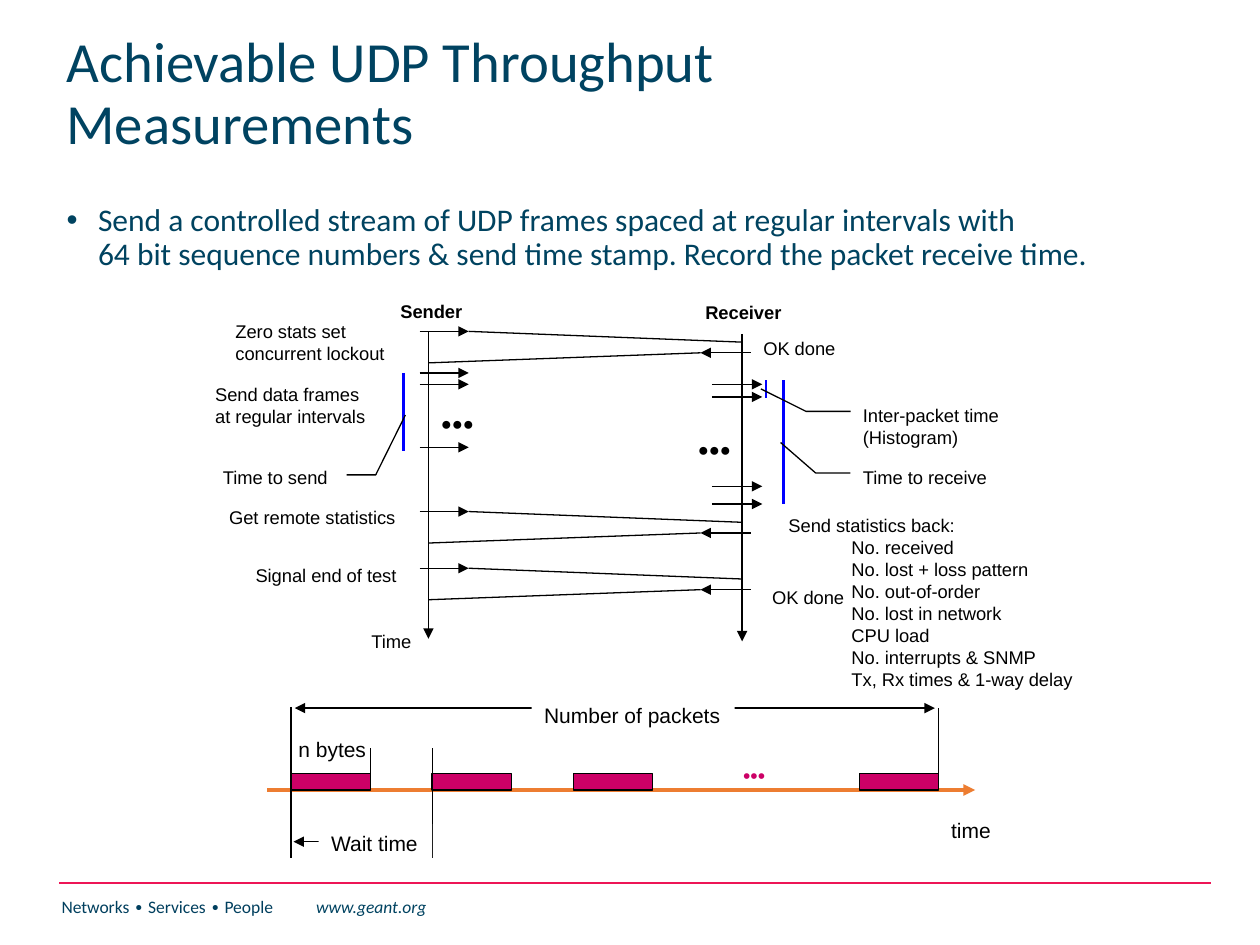
"""Build a slide on UDP throughput tests: message chart above, packet timeline below."""
from lxml.etree import SubElement
from pptx import Presentation
from pptx.dml.color import RGBColor
from pptx.enum.shapes import MSO_CONNECTOR, MSO_SHAPE
from pptx.enum.text import MSO_ANCHOR
from pptx.oxml.ns import qn
from pptx.util import Inches, Pt

COLS, ROWS = 100, 75
HUE = {"title": "004361", "body": "004360", "foot": "003F5E", "rule": "ED1556",
       "ink": "000000", "white": "FFFFFF", "pink": "CC0066", "time": "ED7D31",
       "span": "0000FF"}

TITLE = "Achievable UDP Throughput Measurements"
BODY = ("Send a controlled stream of UDP frames spaced at regular intervals with\v"
        "64 bit sequence numbers & send time stamp. Record the packet receive time.")
FOOT = "Networks ∙ Services ∙ People\t"
SITE = "www.geant.org"

HEADS = [("Sender", (30.8, 23.3, 8, 2.5)), ("Receiver", (55, 23.4, 11, 2.5))]
STATS = ["Send statistics back:", "\tNo. received", "\tNo. lost + loss pattern",
         "\tNo. out-of-order", "\tNo. lost in network", "\tCPU load",
         "\tNo. interrupts & SNMP", "\tTx, Rx times & 1-way delay"]
NOTES = [("Zero stats set concurrent lockout", (17.7, 24.9, 15.2, 3.7)),
         ("OK done", (59.6, 26.3, 9.8, 2.3)),
         ("Send data frames at regular intervals", (16.1, 29.9, 14.7, 5.3)),
         ("●●●", (34, 32.2, 4.8, 2.5)),
         ("●●●", (54.4, 34.3, 4.8, 2.5)),
         ("Get remote statistics", (17.2, 39.7, 15.8, 2.6)),
         ("\n".join(STATS), (61.6, 40.3, 30, 13.8)),
         ("Signal end of test", (19.3, 44.3, 13.6, 2.7)),
         ("OK done", (60.3, 46, 8, 2.5)),
         ("Time", (28.5, 49.5, 8, 2.5))]
CALLS = [("Time to send", (16.7, 36.5, 10.8, 3.1),
          (0.385, 1, 0.385, 1.215, -1.15, 1.433)),
         ("Time to receive", (67.5, 36.5, 13.3, 3),
          (0.351, 0, 0.351, -0.207, -0.459, -0.417)),
         ("Inter-packet time\n(Histogram)", (67.5, 31.6, 13.9, 3.3),
          (0.321, 0, 0.321, -0.254, -0.223, -0.512))]

SEND, RECV = 34, 58.9
TRIPS = [26.3, 40.6, 45.1]
SENT = [29.6, 30.5, 35.5]
GOT = [30.5, 31.5, 38.6, 40]
SPANS = [(32, 29.6, 35.8), (62.2, 30.2, 40), (60.8, 30.2, 31.6)]

AXIS, WIDE, HIGH = 62.7, 6.3, 1.3
FIRST, STEP, LAST = 23.1, 11.2, 68.2
PACKS = [FIRST, FIRST + STEP, FIRST + 2 * STEP, LAST]
MARKS = [(FIRST, 56.1, 68.1), (LAST + WIDE, 56.2, AXIS),
         (FIRST + STEP, 59.4, 68.1), (FIRST + WIDE, 59.4, AXIS)]
TAGS = [("n bytes", (22.7, 58, 7.4, 3), "ink", None),
        ("Number of packets", (42.2, 55.3, 16.1, 3), "ink", "white"),
        ("Wait time", (25.3, 65.4, 9, 3), "ink", "white"),
        ("time", (74.5, 64.4, 5.2, 3), "ink", None),
        ("•••", (58, 60, 4.3, 3), "pink", None)]

deck = Presentation()
deck.slide_width, deck.slide_height = Inches(10), Inches(7.5)
slide = deck.slides.add_slide(deck.slide_layouts[6])
shapes = slide.shapes


def place(box):
    sizes = (deck.slide_width / COLS, deck.slide_height / ROWS) * 2
    return [round(n * size) for n, size in zip(box, sizes)]


def rgb(name):
    return RGBColor.from_string(HUE[name])


def style(run, size, face, hue, bold=False, slant=False):
    font = run.font
    font.size, font.name, font.bold, font.italic = Pt(size), face, bold, slant
    font.color.rgb = rgb(hue)


def write(text, box, size=10.5, face="Arial", hue="ink", bold=False, wrap=True,
          space=None, mid=False, fill=None, shape=None):
    shape = shape or shapes.add_textbox(*place(box))
    if fill:
        shape.fill.solid()
        shape.fill.fore_color.rgb = rgb(fill)
    frame = shape.text_frame
    frame.word_wrap = wrap
    frame.vertical_anchor = MSO_ANCHOR.MIDDLE if mid else MSO_ANCHOR.TOP
    frame.text = text
    for para in frame.paragraphs:
        para.alignment = 1
        if space:
            para.line_spacing = space
        for run in para.runs:
            style(run, size, face, hue, bold)
    return frame


def line(x1, y1, x2, y2, hue="ink", width=0.75, head=False, tail=False):
    wire = shapes.add_connector(MSO_CONNECTOR.STRAIGHT, *place((x1, y1, x2, y2)))
    wire.line.color.rgb = rgb(hue)
    wire.line.width = Pt(width)
    prop = wire._element.spPr
    for end, on in (("a:headEnd", head), ("a:tailEnd", tail)):
        if on:
            SubElement(prop.find(qn("a:ln")), qn(end), type="triangle")
    SubElement(prop, qn("a:effectLst"))


def frame_page():
    line(4.7, 70.1, 96.1, 70.1, "rule", 1)
    para = write(FOOT, (3.9, 70.6, 34.1, 4.4), size=10, face="Calibri",
                 hue="foot").paragraphs[0]
    tabs = SubElement(para._p.get_or_add_pPr(), qn("a:tabLst"))
    SubElement(tabs, qn("a:tab"), pos=str(Inches(2.02)), algn="l")
    run = para.add_run()
    run.text = SITE
    style(run, 10, "Calibri", "title", slant=True)
    write(TITLE, (4.3, 4.9, 78.5, 5.3), size=32.4, face="Calibri", hue="title",
          space=0.9, mid=True)
    para = write(BODY, (4.3, 15.7, 92.6, 52.9), size=18, face="Calibri",
                 hue="body", space=0.9).paragraphs[0]
    prop = para._p.get_or_add_pPr()
    prop.set("marL", str(Inches(0.25)))
    prop.set("indent", str(-Inches(0.25)))
    SubElement(prop, qn("a:buFont"), typeface="Arial")
    SubElement(prop, qn("a:buChar"), char="•")


def draw_packets():
    line(21.2, AXIS, 77.4, AXIS, "time", 2.25, tail=True)
    for x in PACKS:
        pack = shapes.add_shape(MSO_SHAPE.RECTANGLE,
                                *place((x, AXIS - HIGH, WIDE, HIGH)))
        pack.shadow.inherit = False
        pack.fill.solid()
        pack.fill.fore_color.rgb = rgb("pink")
        pack.line.color.rgb = rgb("ink")
        pack.line.width = Pt(0.75)
    for x, top, base in MARKS:
        line(x, top, x, base)
    line(23.4, 56.2, 74.2, 56.2, head=True, tail=True)
    line(23.3, 66.8, 34.3, 66.8, head=True, tail=True)
    for text, box, hue, fill in TAGS:
        write(text, box, size=12, hue=hue, fill=fill, wrap=False)


def draw_trips():
    line(SEND, 26.3, SEND, 50.7, tail=True)
    line(RECV, 26.5, RECV, 50.9, tail=True)
    for y in TRIPS + SENT:
        line(33.3, y, 37.2, y, tail=True)
    for y in TRIPS:
        line(37.2, y, 58.8, y + 0.85)
        line(59.6, y + 1.7, 55.6, y + 1.7, tail=True)
        line(55.6, y + 1.7, SEND, y + 2.5)
    for y in GOT:
        line(56.5, y, 60.5, y, tail=True)
    for x, top, base in SPANS:
        line(x, top, x, base, "span", 1.5)
    for text, box in HEADS:
        write(text, box, bold=True)
    for text, box in NOTES:
        write(text, box)
    for text, box, bends in CALLS:
        call = shapes.add_shape(MSO_SHAPE.LINE_CALLOUT_2_NO_BORDER, *place(box))
        call.shadow.inherit = False
        call.fill.background()
        call.line.color.rgb = rgb("ink")
        call.line.width = Pt(0.75)
        for i, bend in enumerate(bends):
            call.adjustments[i] = bend
        write(text, box, shape=call)


frame_page()
draw_packets()
draw_trips()
deck.save("out.pptx")
